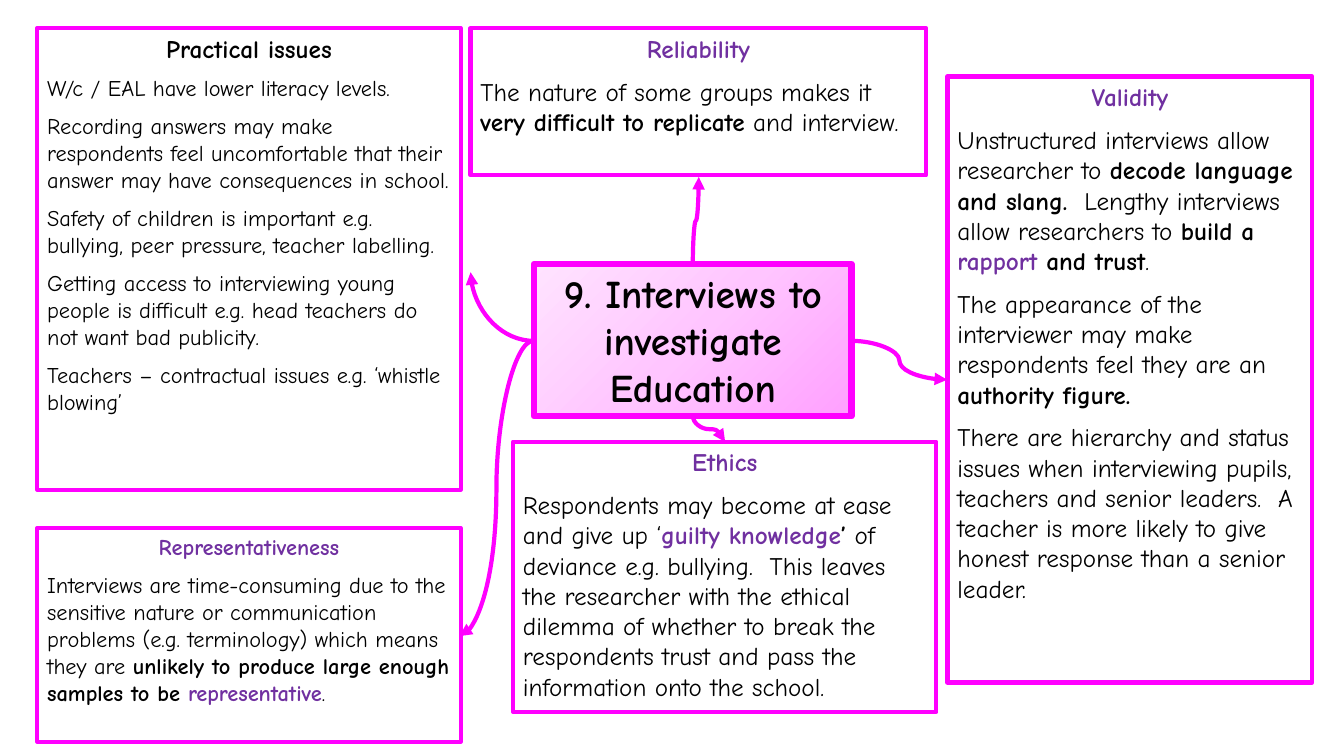
"""Build a mind map slide on using interviews to investigate education."""
from copy import deepcopy

from pptx import Presentation
from pptx.dml.color import RGBColor
from pptx.enum.shapes import MSO_CONNECTOR as CONN, MSO_SHAPE as SHAPE
from pptx.enum.text import MSO_ANCHOR as ANCHOR, PP_ALIGN as ALIGN
from pptx.oxml.ns import qn
from pptx.util import Cm, Pt

FONT = "Comic Neue"
BLACK, PURPLE, MAGENTA = "000000", "7030A0", "FF00FF"
STYLES = {"plain": (BLACK, False), "bold": (BLACK, True), "key": (PURPLE, True)}


def rgb(value):
    return RGBColor.from_string(value)


def add_box(slide, place, line_width, size, paragraphs):
    s = slide.shapes.add_shape(SHAPE.RECTANGLE, *[Cm(v) for v in place])
    s.shadow.inherit = False
    s.fill.background()
    s.line.color.rgb = rgb(MAGENTA)
    s.line.width = Pt(line_width)
    tf = s.text_frame
    tf.word_wrap = True
    tf.vertical_anchor = ANCHOR.TOP
    for i, runs in enumerate(paragraphs):
        p = tf.add_paragraph() if i else tf.paragraphs[0]
        p.alignment = ALIGN.LEFT if i else ALIGN.CENTER
        p.space_before = Pt(size / 2)
        for text, style in runs:
            r = p.add_run()
            r.text = text
            color, bold = STYLES[style]
            r.font.name = FONT
            r.font.size = Pt(size)
            r.font.bold = bold
            r.font.color.rgb = rgb(color)
    return s


prs = Presentation()
prs.slide_width, prs.slide_height = Cm(33.87), Cm(19.05)
slide = prs.slides.add_slide(prs.slide_layouts[6])

title = add_box(slide, (13.46, 6.65, 8, 3.84), 4.5, 28,
                [[("9. Interviews to investigate Education", "bold")]])
title.fill.gradient()
title.fill.gradient_angle = 135
stop_list = title._element.spPr.find(".//" + qn("a:gsLst"))
stop_list.append(deepcopy(stop_list[-1]))
gradient = [(0, "FFA0FF"), (0.5, "FFC5FF"), (1, "FFE3FF")]
for stop, (position, color) in zip(title.fill.gradient_stops, gradient):
    stop.position = position
    stop.color.rgb = rgb(color)

practical = [
    "W/c / EAL have lower literacy levels.",
    "Recording answers may make respondents feel uncomfortable that their "
    "answer may have consequences in school.",
    "Safety of children is important e.g. bullying, peer pressure, teacher labelling.",
    "Getting access to interviewing young people is difficult e.g. head teachers "
    "do not want bad publicity.",
    "Teachers – contractual issues e.g. ‘whistle blowing’",
]
box = add_box(slide, (0.94, 0.71, 10.67, 11.63), 3, 16,
              [[("Practical issues", "bold")]] + [[(text, "plain")] for text in practical])
box.text_frame.paragraphs[0].runs[0].font.size = Pt(18)

topics = [
    ((11.86, 0.71, 11.48, 3.71), 18, [
        [("Reliability", "key")],
        [("The nature of some groups makes it ", "plain"),
         ("very difficult to replicate", "bold"),
         (" and interview.", "plain")],
    ]),
    ((23.88, 1.93, 9.19, 15.27), 18, [
        [("Validity", "key")],
        [("Unstructured interviews allow researcher to ", "plain"),
         ("decode language and slang.", "bold"),
         ("  Lengthy interviews allow researchers to ", "plain"),
         ("build a ", "bold"),
         ("rapport", "key"),
         (" and trust", "bold"),
         (".", "plain")],
        [("The appearance of the interviewer may make respondents feel they are an ", "plain"),
         ("authority figure.", "bold")],
        [("There are hierarchy and status issues when interviewing pupils, teachers "
          "and senior leaders.  A teacher is more likely to give honest response "
          "than a senior leader.", "plain")],
    ]),
    ((12.93, 11.13, 10.67, 6.81), 18, [
        [("Ethics", "key")],
        [("Respondents may become at ease and give up ‘", "plain"),
         ("guilty knowledge", "key"),
         ("’", "bold"),
         (" of deviance e.g. bullying.  This leaves the researcher with the ethical "
          "dilemma of whether to break the respondents trust and pass the information "
          "onto the school.", "plain")],
    ]),
    ((0.94, 13.31, 10.67, 5.38), 16, [
        [("Representativeness", "key")],
        [("Interviews are time-consuming due to the sensitive nature or communication "
          "problems (e.g. terminology) which means they are ", "plain"),
         ("unlikely to produce large enough samples to be ", "bold"),
         ("representative", "key"),
         (".", "plain")],
    ]),
]
for place, size, paragraphs in topics:
    add_box(slide, place, 3, size, paragraphs)

arrows = [
    ((11.86, 6.86, 1.6, 1.73), 180, "", "curvedConnector2"),
    ((16.43, 5.49, 2.21, 0.15), 90, "hv", "curvedConnector3"),
    ((21.46, 8.59, 2.41, 0.98), 0, "", "curvedConnector3"),
    ((17.55, 10.41, 0.64, 0.81), 270, "h", "curvedConnector3"),
    ((11.58, 8.59, 1.86, 7.44), 180, "v", "curvedConnector3"),
]
for (x, y, w, h), angle, flip, preset in arrows:
    x1, x2 = (x + w, x) if "h" in flip else (x, x + w)
    y1, y2 = (y + h, y) if "v" in flip else (y, y + h)
    c = slide.shapes.add_connector(CONN.CURVE, Cm(x1), Cm(y1), Cm(x2), Cm(y2))
    c.line.color.rgb = rgb(MAGENTA)
    c.line.width = Pt(3)
    sp_pr = c._element.spPr
    sp_pr.find(qn("a:xfrm")).set("rot", str(angle * 60000))
    sp_pr.find(qn("a:prstGeom")).set("prst", preset)
    ln = sp_pr.find(qn("a:ln"))
    tail = ln.makeelement(qn("a:tailEnd"), {"type": "triangle"})
    ln.append(tail)
    sp_pr.append(sp_pr.makeelement(qn("a:effectLst"), {}))

prs.save("out.pptx")
